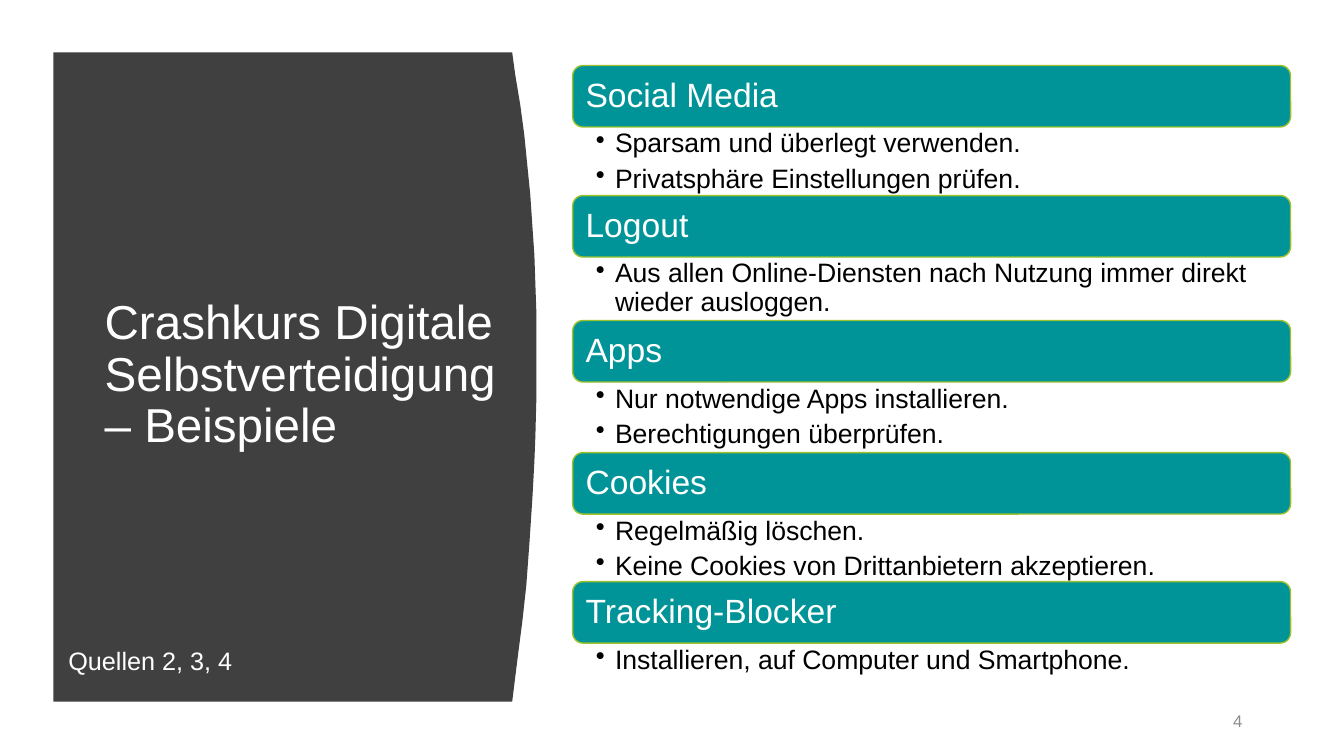
from lxml.etree import SubElement
from pptx import Presentation
from pptx.dml.color import RGBColor
from pptx.enum.shapes import MSO_SHAPE
from pptx.enum.text import MSO_ANCHOR, PP_ALIGN
from pptx.oxml.ns import qn
from pptx.util import Pt

PX = 9144
WHITE = RGBColor(0xFF, 0xFF, 0xFF)
BLACK = RGBColor(0x00, 0x00, 0x00)
DARK_GRAY = RGBColor(0x40, 0x40, 0x40)
LIGHT_GRAY = RGBColor(0x8C, 0x8C, 0x8C)
TEAL = RGBColor(0x00, 0x94, 0x99)
GREEN = RGBColor(0x9B, 0xC2, 0x2B)


def add_text_box(left, top, width, height, anchor=MSO_ANCHOR.TOP):
    box = slide.shapes.add_textbox(left * PX, top * PX, width * PX, height * PX)
    box.text_frame.word_wrap = True
    box.text_frame.vertical_anchor = anchor
    return box.text_frame


def add_run(paragraph, text, size, color):
    run = paragraph.add_run()
    run.text = text
    run.font.name = "Arial"
    run.font.size = Pt(size)
    run.font.color.rgb = color


presentation = Presentation()
presentation.slide_width = 1333 * PX
presentation.slide_height = 750 * PX
slide = presentation.slides.add_slide(presentation.slide_layouts[6])

curve = [
    (508, 52), (511, 74), (516, 104), (520, 134), (523, 164), (526, 194),
    (528, 224), (530, 253), (531, 282), (532, 311), (532, 353), (532, 394),
    (531, 433), (530, 458), (528, 495), (525, 540), (522, 581), (518, 617),
    (514, 648), (511, 672), (508, 696),
]
builder = slide.shapes.build_freeform(53, 52, scale=PX)
builder.add_line_segments(curve + [(53, 696)], close=True)
panel = builder.convert_to_shape()
panel.shadow.inherit = False
panel.fill.solid()
panel.fill.fore_color.rgb = DARK_GRAY
panel.line.fill.background()

title = add_text_box(94, 111, 423, 524, MSO_ANCHOR.MIDDLE).paragraphs[0]
title.line_spacing = 0.9
add_run(title, "Crashkurs Digitale Selbstverteidigung – Beispiele", 34, WHITE)

sources = add_text_box(58, 635, 339, 40).paragraphs[0]
add_run(sources, "Quellen 2, 3, 4", 18, WHITE)

topics = [
    ("Social Media", ["Sparsam und überlegt verwenden.", "Privatsphäre Einstellungen prüfen."]),
    ("Logout", ["Aus allen Online-Diensten nach Nutzung immer direkt wieder ausloggen."]),
    ("Apps", ["Nur notwendige Apps installieren.", "Berechtigungen überprüfen."]),
    ("Cookies", ["Regelmäßig löschen.", "Keine Cookies von Drittanbietern akzeptieren."]),
    ("Tracking-Blocker", ["Installieren, auf Computer und Smartphone."]),
]
topic_tops = [65, 194, 318, 449, 577]
topic_bottoms = topic_tops[1:] + [681]
topic_left, topic_width, header_height = 568, 712, 61

for (heading, tips), top, bottom in zip(topics, topic_tops, topic_bottoms):
    header = slide.shapes.add_shape(
        MSO_SHAPE.ROUNDED_RECTANGLE,
        topic_left * PX, top * PX, topic_width * PX, header_height * PX,
    )
    header.shadow.inherit = False
    header.fill.solid()
    header.fill.fore_color.rgb = TEAL
    header.line.color.rgb = GREEN
    header.line.width = Pt(1)
    header_frame = header.text_frame
    header_frame.word_wrap = True
    header_frame.vertical_anchor = MSO_ANCHOR.MIDDLE
    header_frame.margin_left = header_frame.margin_right = 10 * PX
    paragraph = header_frame.paragraphs[0]
    paragraph.alignment = PP_ALIGN.LEFT
    paragraph.line_spacing = 0.9
    add_run(paragraph, heading, 24, WHITE)

    body_top = top + header_height
    body = add_text_box(topic_left, body_top, topic_width, bottom - body_top)
    body.margin_left = 23 * PX
    body.margin_right = 19 * PX
    body.margin_top = body.margin_bottom = 3 * PX
    for index, tip in enumerate(tips):
        paragraph = body.add_paragraph() if index else body.paragraphs[0]
        paragraph.line_spacing = 0.9
        paragraph.space_after = Pt(4.5)
        properties = paragraph._p.get_or_add_pPr()
        properties.set("marL", str(19 * PX))
        properties.set("indent", str(-19 * PX))
        SubElement(properties, qn("a:buChar")).set("char", "•")
        add_run(paragraph, tip, 19, BLACK)

page_number = add_text_box(942, 695, 300, 40, MSO_ANCHOR.MIDDLE).paragraphs[0]
page_number.alignment = PP_ALIGN.RIGHT
add_run(page_number, "4", 12, LIGHT_GRAY)

presentation.save("out.pptx")
